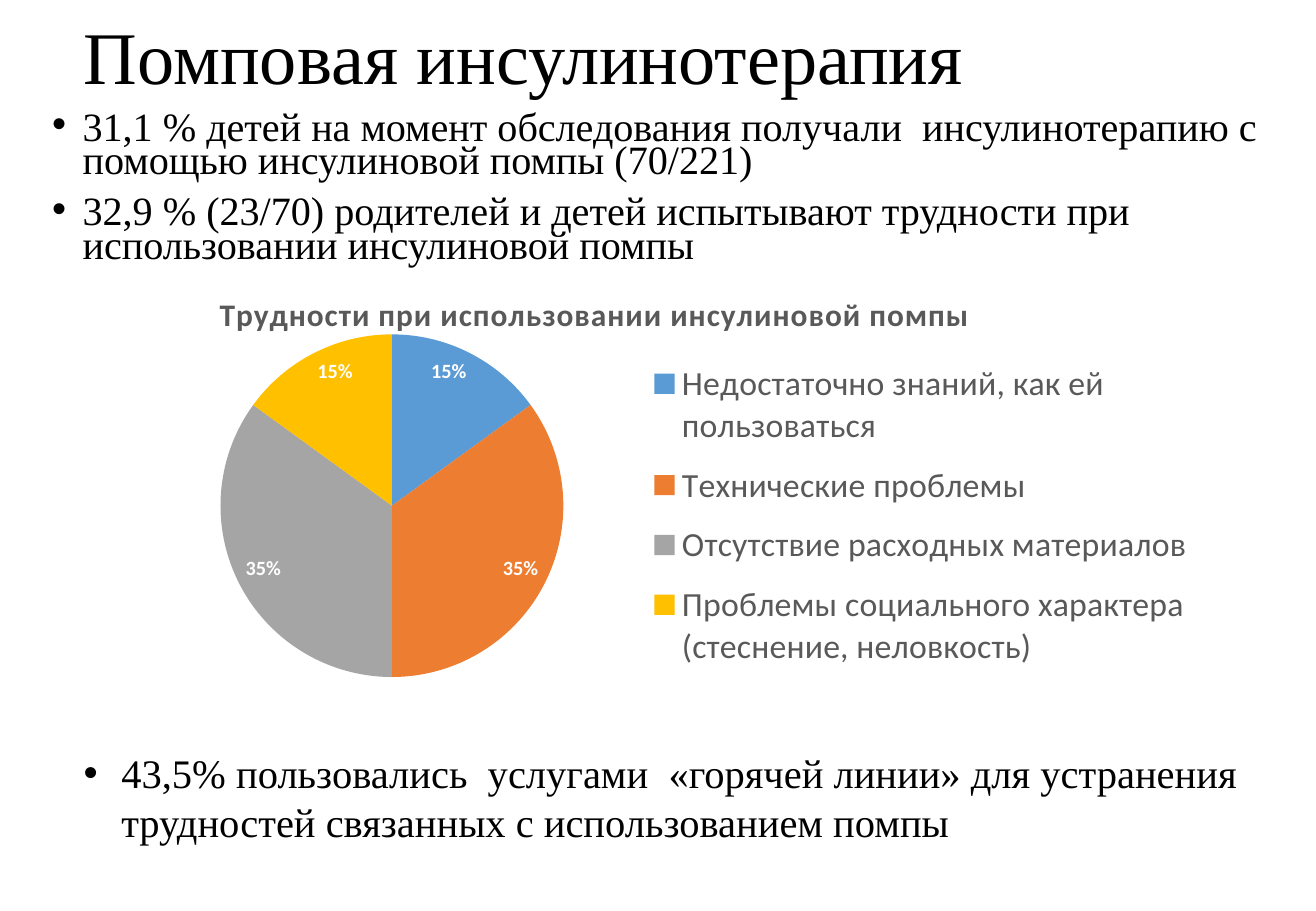
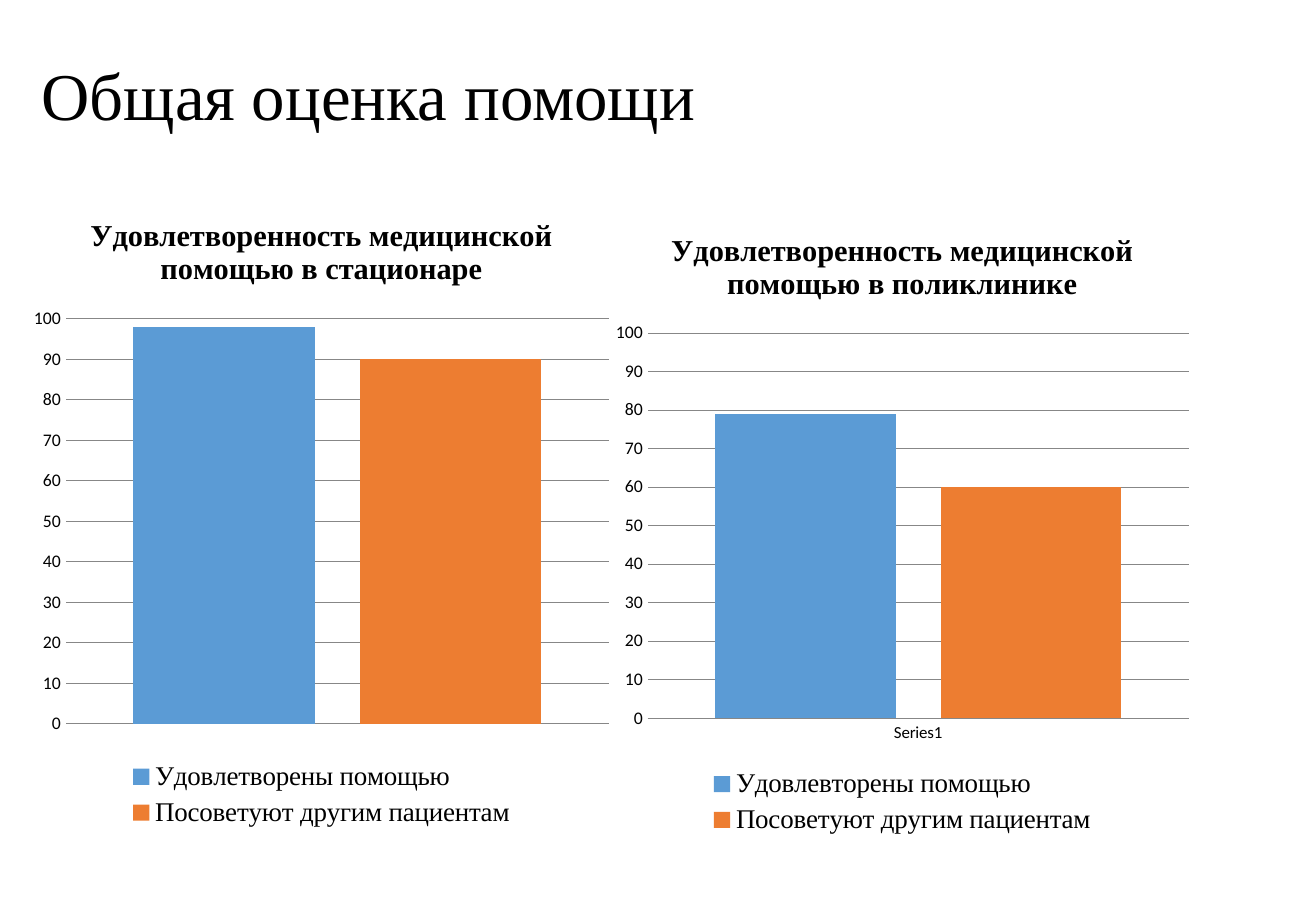
import pptx
import pptx.chart.data
import pptx.dml.color
import pptx.enum.chart
import pptx.enum.text
import pptx.oxml
import pptx.oxml.ns
import pptx.util
from lxml import etree

Inches, Pt, qn = pptx.util.Inches, pptx.util.Pt, pptx.oxml.ns.qn
chart_enum = pptx.enum.chart

# Shared look
SERIF, SANS = "Times New Roman", "Calibri"
BLACK, WHITE, GREY, GRID = "000000", "FFFFFF", "595959", "878787"
PALETTE = ["5B9BD5", "ED7D31", "A5A5A5", "FFC000"]

# Content
PUMP_TITLE = "Помповая инсулинотерапия"
PUMP_FACTS = [
    "31,1 % детей на момент обследования получали  инсулинотерапию с помощью инсулиновой помпы (70/221)",
    "32,9 % (23/70) родителей и детей испытывают трудности при использовании инсулиновой помпы",
]
HOTLINE_FACT = ("43,5% пользовались  услугами  «горячей линии» для устранения "
                "трудностей связанных с использованием помпы")
DIFFICULTIES_TITLE = "Трудности при использовании инсулиновой помпы"
DIFFICULTIES = {
    "Недостаточно знаний, как ей пользоваться": 15,
    "Технические проблемы": 35,
    "Отсутствие расходных материалов": 35,
    "Проблемы социального характера (стеснение, неловкость)": 15,
}
RATING_TITLE = "Общая оценка помощи"
RATINGS = [
    {"title": "Удовлетворенность медицинской помощью в стационаре",
     "box": (0.18, 1.58, 4.93, 5.28), "category": "1", "show_category": False,
     "values": {"Удовлетворены помощью": 98, "Посоветуют другим пациентам": 90}},
    {"title": "Удовлетворенность медицинской помощью в поликлинике",
     "box": (4.97, 1.7, 4.91, 5.22), "category": "Series1", "show_category": True,
     "values": {"Удовлевторены помощью": 79, "Посоветуют другим пациентам": 60}},
]


def color(hex_text):
    return pptx.dml.color.RGBColor.from_string(hex_text)


def style_font(font, size, name, hex_text=BLACK, bold=False):
    font.size, font.name, font.bold = Pt(size), name, bold
    font.color.rgb = color(hex_text)


def paint(part, hex_text):
    part.format.fill.solid()
    part.format.fill.fore_color.rgb = color(hex_text)


def move(shape, box):
    shape.left, shape.top, shape.width, shape.height = map(Inches, box)


def set_title(slide, text, box, size):
    title = slide.shapes.title
    move(title, box)
    frame = title.text_frame
    frame.text = text
    frame.auto_size = pptx.enum.text.MSO_AUTO_SIZE.NONE
    frame.vertical_anchor = pptx.enum.text.MSO_ANCHOR.MIDDLE
    paragraph = frame.paragraphs[0]
    paragraph.alignment = pptx.enum.text.PP_ALIGN.LEFT
    paragraph.line_spacing = 0.9
    style_font(paragraph.runs[0].font, size, SERIF)


def set_bullets(frame, lines, size, indent, line_spacing=1.0, space_before=0):
    frame.word_wrap = True
    frame.text = "\n".join(lines)
    for paragraph in frame.paragraphs:
        paragraph.line_spacing = line_spacing
        paragraph.space_before = Pt(space_before)
        properties = paragraph._p.get_or_add_pPr()
        properties.set("marL", str(Inches(indent)))
        properties.set("indent", str(-Inches(indent)))
        etree.SubElement(properties, qn("a:buFont")).set("typeface", "Arial")
        etree.SubElement(properties, qn("a:buChar")).set("char", "•")
        style_font(paragraph.runs[0].font, size, SERIF)


def place_part(chart, tag, **shares):
    """Position a chart part by shares of the chart's size."""
    part = next(chart.element.iter(qn(tag)))
    for old_layout in part.findall(qn("c:layout")):
        part.remove(old_layout)
    layout = etree.Element(qn("c:layout"))
    manual = etree.SubElement(layout, qn("c:manualLayout"))
    inner = {"layoutTarget": "inner"} if tag == "c:plotArea" else {}
    for name, value in {**inner, "xMode": "edge", "yMode": "edge", **shares}.items():
        etree.SubElement(manual, qn("c:" + name)).set("val", str(value))
    part.insert(0 if inner else 1, layout)


def add_chart(slide, kind, box, data, title, title_style, legend_position, legend_style):
    chart = slide.shapes.add_chart(kind, *map(Inches, box), data).chart
    style_font(chart.font, 10, SANS)
    chart.has_title = True
    frame = chart.chart_title.text_frame
    frame.text = title
    style_font(frame.paragraphs[0].runs[0].font, *title_style, bold=True)
    chart.has_legend = True
    chart.legend.position = legend_position
    chart.legend.include_in_layout = False
    style_font(chart.legend.font, *legend_style)
    return chart


def add_difficulties_pie(slide):
    data = pptx.chart.data.CategoryChartData()
    data.categories = list(DIFFICULTIES)
    data.add_series(DIFFICULTIES_TITLE, list(DIFFICULTIES.values()))
    chart = add_chart(slide, chart_enum.XL_CHART_TYPE.PIE, (1.05, 2.36, 8.88, 3.42), data,
                      DIFFICULTIES_TITLE, (18.6, SANS, GREY),
                      chart_enum.XL_LEGEND_POSITION.TOP, (20, SANS, GREY))
    next(chart.element.iter(qn("a:rPr"))).set("spc", "50")
    place_part(chart, "c:title", x=0.08, y=0)
    place_part(chart, "c:plotArea", x=0, y=0.115, w=0.49, h=0.825)
    place_part(chart, "c:legend", x=0.48, y=0.14, w=0.51, h=0.82)
    plot = chart.plots[0]
    for index, hex_text in enumerate(PALETTE):
        paint(plot.series[0].points[index], hex_text)
    plot.has_data_labels = True
    labels = plot.data_labels
    labels.show_percentage, labels.show_value = True, False
    labels.position = chart_enum.XL_LABEL_POSITION.INSIDE_END
    style_font(labels.font, 12, SANS, WHITE, bold=True)


def add_rating_columns(slide, rating):
    data = pptx.chart.data.CategoryChartData()
    data.categories = [rating["category"]]
    for name, value in rating["values"].items():
        data.add_series(name, [value])
    chart = add_chart(slide, chart_enum.XL_CHART_TYPE.COLUMN_CLUSTERED, rating["box"], data,
                      rating["title"], (18, SERIF),
                      chart_enum.XL_LEGEND_POSITION.BOTTOM, (16, SERIF))
    plot = chart.plots[0]
    plot.gap_width, plot.overlap, plot.vary_by_categories = 75, -25, False
    for series, hex_text in zip(plot.series, PALETTE):
        paint(series, hex_text)
    # Axes
    values, categories = chart.value_axis, chart.category_axis
    values.minimum_scale, values.maximum_scale, values.major_unit = 0, 100, 10
    values.has_major_gridlines = True
    values.major_gridlines.format.line.color.rgb = color(GRID)
    values.format.line.fill.background()
    style_font(values.tick_labels.font, 10.5, SANS)
    categories.visible = rating["show_category"]
    categories.format.line.color.rgb = color(GRID)
    for axis in (values, categories):
        axis.major_tick_mark = chart_enum.XL_TICK_MARK.NONE


def main():
    presentation = pptx.Presentation()
    presentation.slide_width, presentation.slide_height = Inches(10.83), Inches(7.5)
    layouts = presentation.slide_layouts

    # Insulin pump slide
    slide = presentation.slides.add_slide(layouts.get_by_name("Title and Content"))
    set_title(slide, PUMP_TITLE, (0.59, 0.11, 9.34, 0.78), 44)
    body = slide.placeholders[1]
    move(body, (0.33, 0.89, 10.24, 1.47))
    body.text_frame.auto_size = pptx.enum.text.MSO_AUTO_SIZE.NONE
    set_bullets(body.text_frame, PUMP_FACTS, 23.8, 0.25, line_spacing=0.7, space_before=10)
    add_difficulties_pie(slide)
    hotline = slide.shapes.add_textbox(*map(Inches, (0.59, 6.11, 9.82, 0.91)))
    hotline.text_frame.auto_size = pptx.enum.text.MSO_AUTO_SIZE.SHAPE_TO_FIT_TEXT
    set_bullets(hotline.text_frame, [HOTLINE_FACT], 24, 0.31)

    # Overall rating slide
    slide = presentation.slides.add_slide(layouts.get_by_name("Title Only"))
    set_title(slide, RATING_TITLE, (0.24, 0.44, 9.34, 0.74), 39.6)
    for rating in RATINGS:
        add_rating_columns(slide, rating)

    presentation.save("out.pptx")


if __name__ == "__main__":
    main()
